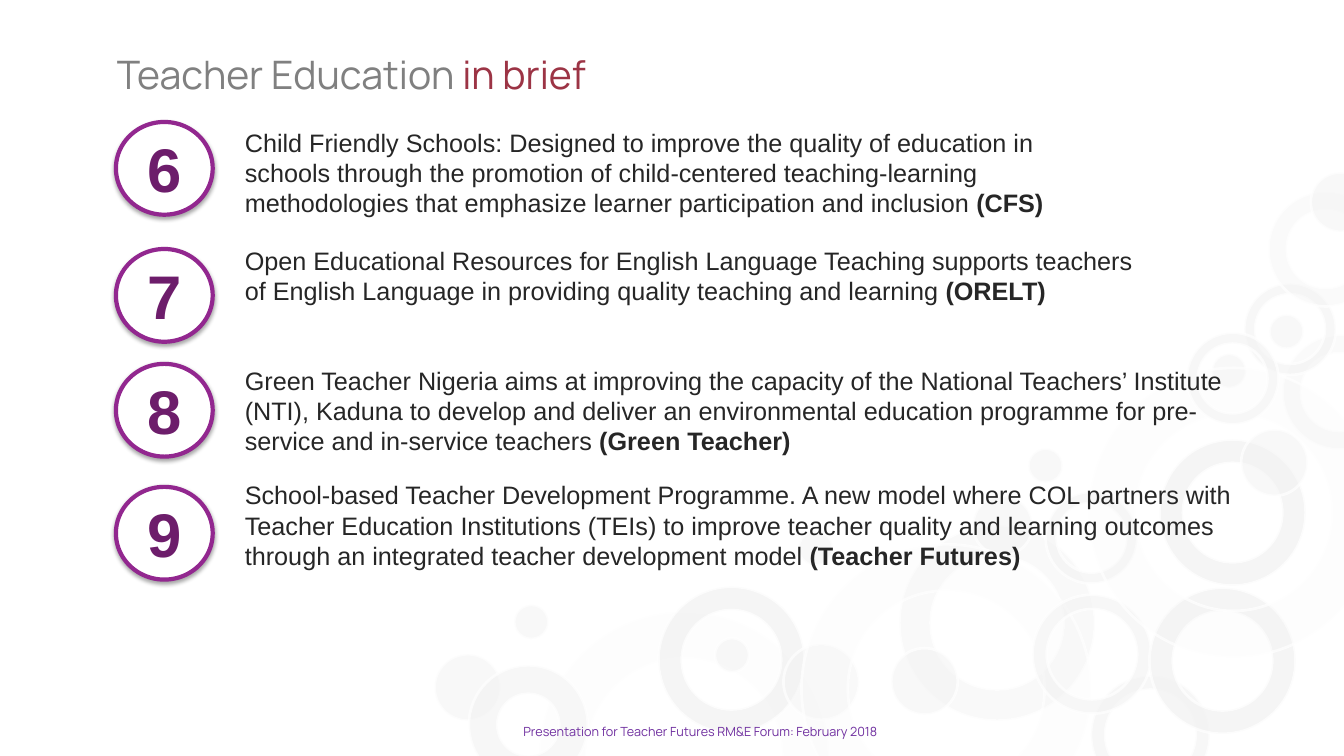
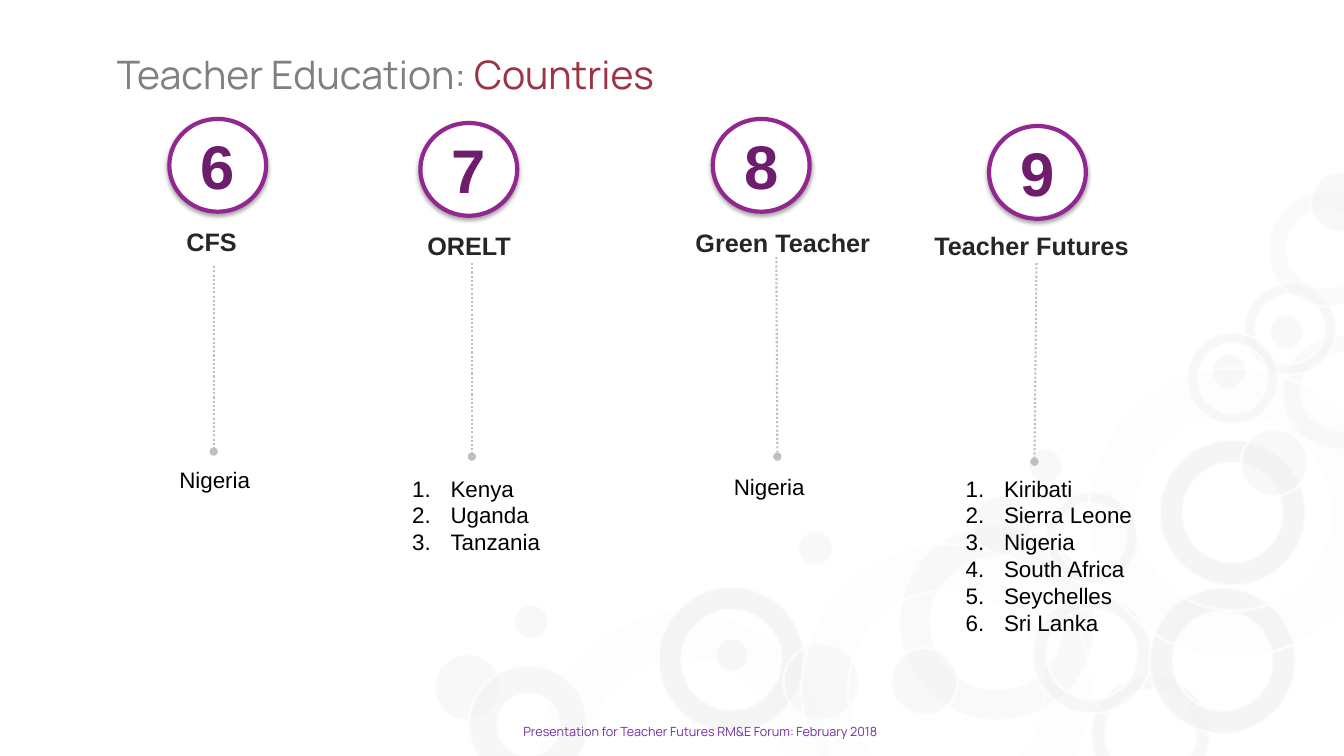
from dataclasses import dataclass
from typing import NamedTuple

from lxml import etree
from pptx import Presentation
from pptx.dml.color import RGBColor
from pptx.enum import dml, shapes, text
from pptx.oxml import ns
from pptx.util import Inches, Pt

WHITE = RGBColor(0xFF, 0xFF, 0xFF)
PALE = RGBColor(0xF2, 0xF2, 0xF2)
SILVER = RGBColor(0xBF, 0xBF, 0xBF)
GREY = RGBColor(0x80, 0x80, 0x80)
INK = RGBColor(0x26, 0x26, 0x26)
BLACK = RGBColor(0x00, 0x00, 0x00)
RED = RGBColor(0x9C, 0x34, 0x45)
VIOLET = RGBColor(0x70, 0x30, 0xA0)
PURPLE = RGBColor(0x92, 0x27, 0x8F)
PLUM = RGBColor(0x6D, 0x1D, 0x6B)

SANS = "Arial"
BRAND = "Manrope"
FOOTER = "Presentation for Teacher Futures RM&E Forum: February 2018"


class Kind(NamedTuple):
    size: float
    alpha: int
    band: float = 0  # ring thickness as a share of size; 0 is a full disc


HUGE = Kind(2.87, 13, 0.16)
LARGE = Kind(1.94, 42, 0.16)
BOLD = Kind(1.45, 75, 0.16)
FAINT = Kind(1.14, 31, 0.16)
THIN = Kind(1.18, 54, 0.12)
THICK = Kind(1.18, 54, 0.24)
SMALL = Kind(0.91, 54, 0.12)
PLATE = Kind(0.75, 39)
DISC = Kind(0.66, 47)
BALL = Kind(0.59, 47)
DOT = Kind(0.34, 47)

BUBBLES: list[tuple[Kind, float, float]] = [
    (BOLD, 11.5, 4.36), (FAINT, 12.72, 3.32), (HUGE, 5.35, 6.07),
    (THIN, 10.82, 6.7), (SMALL, 12.34, 2.81), (DISC, 12.31, 4.26),
    (DOT, 12.02, 3.51), (LARGE, 8.92, 5.21), (BOLD, 6.53, 5.82),
    (PLATE, 7.77, 6.39), (BALL, 9.65, 4.92), (HUGE, 7.95, 5.4),
    (THIN, 10.24, 5.9), (SMALL, 10.37, 4.88), (DOT, 7.92, 5.27),
    (DISC, 4.31, 6.49), (DOT, 7.09, 6.33), (DOT, 10.2, 4.45),
    (BOLD, 11.4, 5.83), (FAINT, 12.58, 1.9), (BALL, 13, 1.71),
    (HUGE, 10.8, 3.65), (SMALL, 11.77, 3.3), (THICK, 4.65, 6.6),
    (DOT, 12.59, 3.12), (DISC, 8.84, 6.43), (DOT, 5.1, 6),
]


class Style(NamedTuple):
    size: float
    color: RGBColor
    bold: bool = False
    font: str = SANS


BODY = Style(18, INK)
STRONG = Style(18, INK, True)
PLACE = Style(16, BLACK)
DIGIT = Style(44, PLUM, True)
LEAD = Style(28, GREY, font=BRAND)
ACCENT = Style(28, RED, font=BRAND)
FOOT = Style(9, VIOLET, font=BRAND)


@dataclass
class Brief:
    number: str
    words: str
    label: str
    badge_y: float
    text_y: float
    width: float
    height: float = 1.01


@dataclass
class Column:
    number: str
    label: str
    badge: tuple[float, float]
    head: tuple[float, float]
    start: tuple[float, float]
    end: tuple[float, float]
    list_at: tuple[float, float]
    lands: list[str]


BRIEFS = [
    Brief("6", "Child Friendly Schools: Designed to improve the quality of education in "
          "schools through the promotion of child-centered teaching-learning methodologies "
          "that emphasize learner participation and inclusion ",
          "(CFS)", 1.21, 1.21, 8.32),
    Brief("7", "Open Educational Resources for English Language Teaching supports teachers "
          "of English Language in providing quality teaching and learning ",
          "(ORELT)", 2.47, 2.38, 9.19, 0.71),
    Brief("8", "Green Teacher Nigeria aims at improving the capacity of the National "
          "Teachers’ Institute (NTI), Kaduna to develop and deliver an environmental "
          "education programme for pre-service and in-service teachers ",
          "(Green Teacher)", 3.61, 3.57, 10.07),
    Brief("9", "School-based Teacher Development Programme. A new model where COL partners "
          "with Teacher Education Institutions (TEIs) to improve teacher quality and "
          "learning outcomes through an integrated teacher development model ",
          "(Teacher Futures)", 4.83, 4.71, 9.99),
]

COLUMNS = [
    Column("6", "CFS", (1.68, 1.18), (1.75, 2.2), (2.12, 2.64), (2.12, 4.48),
           (1.68, 4.58), ["Nigeria"]),
    Column("7", "ORELT", (4.17, 1.22), (4.14, 2.24), (4.68, 2.61), (4.68, 4.53),
           (3.99, 4.66), ["Kenya", "Uganda", "Tanzania"]),
    Column("8", "Green Teacher", (7.07, 1.18), (6.8, 2.21), (7.7, 2.55), (7.71, 4.53),
           (7.18, 4.64), ["Nigeria"]),
    Column("9", "Teacher Futures", (9.81, 1.25), (9.17, 2.24), (10.28, 2.61), (10.26, 4.58),
           (9.48, 4.66), ["Kiribati", "Sierra Leone", "Nigeria", "South Africa",
                          "Seychelles", "Sri Lanka"]),
]


def add_sub(parent, tag: str, **attrs):
    return etree.SubElement(parent, ns.qn(tag), attrs)


def add_run(para, words: str, style: Style) -> None:
    run = para.add_run()
    run.text = words
    font = run.font
    font.name, font.size, font.bold = style.font, Pt(style.size), style.bold
    font.color.rgb = style.color


def add_box(slide, x: float, y: float, w: float, h: float):
    box = slide.shapes.add_textbox(Inches(x), Inches(y), Inches(w), Inches(h))
    box.text_frame.word_wrap = True
    return box


def add_bubble(slide, kind: Kind, x: float, y: float):
    preset = shapes.MSO_SHAPE.DONUT if kind.band else shapes.MSO_SHAPE.OVAL
    size = Inches(kind.size)
    bubble = slide.shapes.add_shape(preset, Inches(x), Inches(y), size, size)
    if kind.band:
        bubble.adjustments[0] = kind.band
    bubble.shadow.inherit = False
    bubble.fill.solid()
    bubble.fill.fore_color.rgb = PALE
    bubble.line.color.rgb = WHITE
    bubble.line.width = Pt(2)
    tints = list(bubble.element.spPr.iter(ns.qn("a:srgbClr")))
    for tint, alpha in zip(tints, (kind.alpha, 70)):
        add_sub(tint, "a:alpha", val=str(alpha * 1000))
    return bubble


def dress(layout, slide) -> None:
    """Move the bubbles and footer, drawn on a slide, to the shared layout."""
    for holder in list(layout.placeholders):
        if holder.placeholder_format.idx:
            holder.element.getparent().remove(holder.element)
    parts = [add_bubble(slide, *bubble) for bubble in BUBBLES]
    foot = add_box(slide, 3.61, 7.13, 6.67, 0.25)
    para = foot.text_frame.paragraphs[0]
    para.alignment = text.PP_ALIGN.CENTER
    add_run(para, FOOTER, FOOT)
    for part in parts + [foot]:
        layout.shapes.element.append(part.element)


def set_title(slide, lead: str, accent: str) -> None:
    title = slide.shapes.title
    title.left, title.top = Inches(1.06), Inches(0.45)
    title.width, title.height = Inches(7.81), Inches(0.57)
    frame = title.text_frame
    frame.vertical_anchor = text.MSO_ANCHOR.TOP
    frame.auto_size = text.MSO_AUTO_SIZE.NONE
    para = frame.paragraphs[0]
    para.alignment = text.PP_ALIGN.LEFT
    add_run(para, lead, LEAD)
    add_run(para, accent, ACCENT)


def add_badge(slide, number: str, x: float, y: float) -> None:
    badge = slide.shapes.add_shape(
        shapes.MSO_SHAPE.OVAL, Inches(x), Inches(y), Inches(0.96), Inches(0.92))
    badge.fill.solid()
    badge.fill.fore_color.rgb = WHITE
    badge.line.color.rgb = PURPLE
    badge.line.width = Pt(3)
    badge.shadow.inherit = False
    glow = add_sub(badge.element.spPr.find(ns.qn("a:effectLst")), "a:outerShdw",
                   blurRad=str(Pt(3.1)), dist=str(Pt(1.8)), dir="5400000", rotWithShape="0")
    tint = add_sub(glow, "a:srgbClr", val=str(BLACK))
    add_sub(tint, "a:alpha", val="35000")
    frame = badge.text_frame
    frame.vertical_anchor = text.MSO_ANCHOR.MIDDLE
    para = frame.paragraphs[0]
    para.alignment = text.PP_ALIGN.CENTER
    add_run(para, number, DIGIT)


def add_stem(slide, start: tuple[float, float], end: tuple[float, float]) -> None:
    """Draw a dotted line that ends in a round dot."""
    stem = slide.shapes.add_connector(
        shapes.MSO_CONNECTOR.STRAIGHT, *map(Inches, start + end))
    stem.line.color.rgb = SILVER
    stem.line.width = Pt(1.5)
    stem.line.dash_style = dml.MSO_LINE.ROUND_DOT
    props = stem.element.spPr
    add_sub(props.find(ns.qn("a:ln")), "a:tailEnd", type="oval")
    add_sub(props, "a:effectLst")


def add_lands(slide, x: float, y: float, lands: list[str]) -> None:
    """List the countries, numbered when there are several."""
    frame = add_box(slide, x, y, 2.68, 0.1 + 0.27 * len(lands)).text_frame
    for i, land in enumerate(lands):
        para = frame.add_paragraph() if i else frame.paragraphs[0]
        add_run(para, land, PLACE)
        if len(lands) > 1:
            props = para._p.get_or_add_pPr()
            props.set("marL", str(Inches(0.38)))
            props.set("indent", str(Inches(-0.38)))
            add_sub(props, "a:buFont", typeface="+mj-lt")
            add_sub(props, "a:buAutoNum", type="arabicPeriod")


def draw_briefs(slide) -> None:
    set_title(slide, "Teacher Education ", "in brief")
    for brief in BRIEFS:
        add_badge(slide, brief.number, 1.15, brief.badge_y)
        box = add_box(slide, 2.33, brief.text_y, brief.width, brief.height)
        para = box.text_frame.paragraphs[0]
        add_run(para, brief.words, BODY)
        add_run(para, brief.label, STRONG)


def draw_columns(slide) -> None:
    set_title(slide, "Teacher Education: ", "Countries")
    for col in COLUMNS:
        add_badge(slide, col.number, *col.badge)
        head = add_box(slide, *col.head, 2.27, 0.4)
        add_run(head.text_frame.paragraphs[0], col.label, STRONG)
        add_stem(slide, col.start, col.end)
        add_lands(slide, *col.list_at, col.lands)


def main() -> None:
    deck = Presentation()
    deck.slide_width, deck.slide_height = Inches(13.33), Inches(7.5)
    layout = deck.slide_layouts[5]
    first = deck.slides.add_slide(layout)
    dress(layout, first)
    draw_briefs(first)
    draw_columns(deck.slides.add_slide(layout))
    deck.save("out.pptx")


if __name__ == "__main__":
    main()
